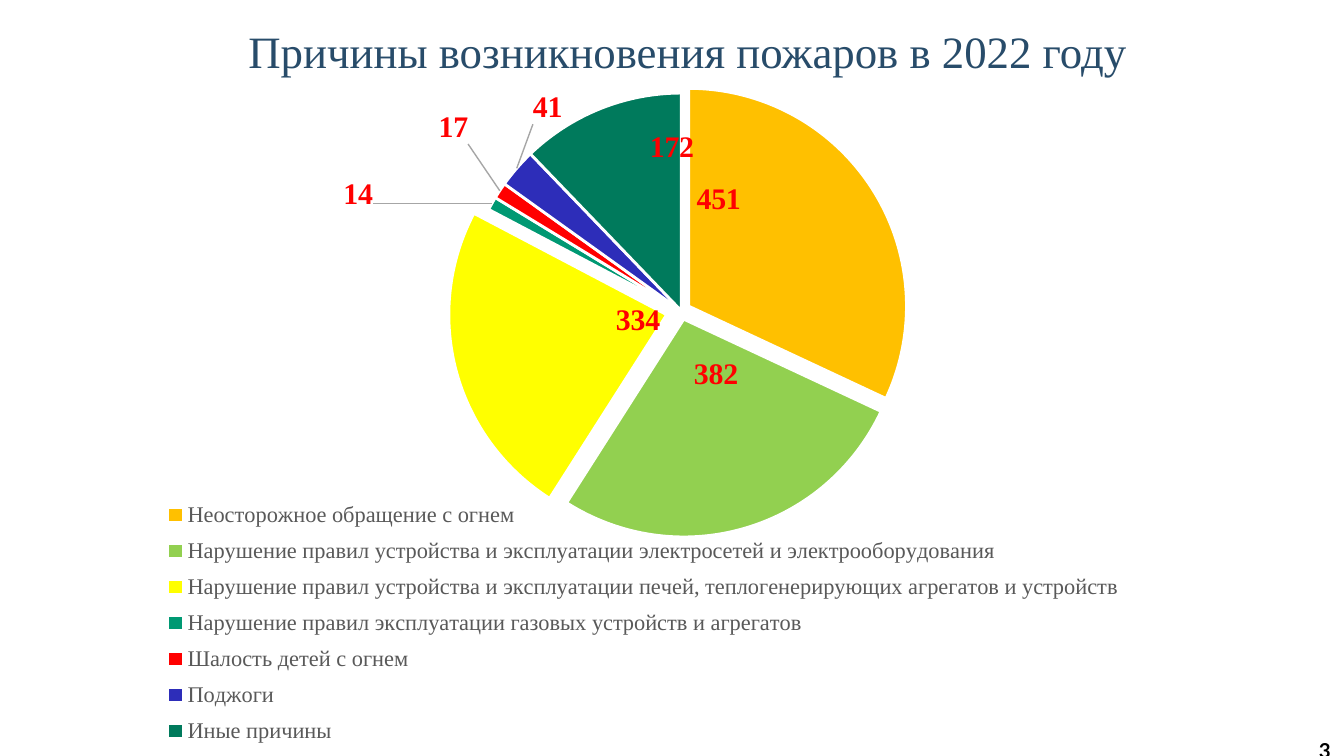
"""Build a slide with an exploded pie chart of the causes of fires in 2022."""
import math

from lxml import etree
from pptx import Presentation
from pptx import util as u
from pptx.chart.data import CategoryChartData
from pptx.dml.color import RGBColor
from pptx.enum import chart as kinds
from pptx.enum import text
from pptx.oxml import ns

WHITE = RGBColor(0xFF, 0xFF, 0xFF)
BLACK = RGBColor(0x00, 0x00, 0x00)
NAVY = RGBColor(0x28, 0x4C, 0x6A)
GREY = RGBColor(0x59, 0x59, 0x59)
SILVER = RGBColor(0xA6, 0xA6, 0xA6)
AMBER = RGBColor(0xFF, 0xC0, 0x00)
LIME = RGBColor(0x92, 0xD0, 0x50)
YELLOW = RGBColor(0xFF, 0xFF, 0x00)
TEAL = RGBColor(0x00, 0x99, 0x73)
RED = RGBColor(0xFF, 0x00, 0x00)
BLUE = RGBColor(0x2D, 0x2D, 0xB9)
GREEN = RGBColor(0x00, 0x7A, 0x5C)

TITLE = "Причины возникновения пожаров в 2022 году"
PAGE_NUMBER = "3"
# name, value, colour, explosion in percent, label centre in points
CAUSES = [
    ("Неосторожное обращение с огнем", 451, AMBER, 4, (385, 107)),
    ("Нарушение правил устройства и эксплуатации электросетей и электрооборудования",
     382, LIME, 4, (383.5, 200.5)),
    ("Нарушение правил устройства и эксплуатации печей, теплогенерирующих агрегатов и устройств",
     334, YELLOW, 7, (341.5, 171.5)),
    ("Нарушение правил эксплуатации газовых устройств и агрегатов", 14, TEAL, 0, (191.5, 104.5)),
    ("Шалость детей с огнем", 17, RED, 0, (242.5, 68.5)),
    ("Поджоги", 41, BLUE, 0, (293, 58)),
    ("Иные причины", 172, GREEN, 0, (359.5, 79)),
]

SERIF = "Times New Roman"
TITLE_FONT = {"name": SERIF, "size": u.Pt(24), "bold": False}
LEGEND_FONT = {"name": SERIF, "size": u.Pt(12)}
LABEL_FONT = {"name": SERIF, "size": u.Pt(16), "bold": True}
CHART_FONT = {"name": "Lato", "size": u.Pt(10)}
NUMBER_FONT = {"name": "Lato", "size": u.Pt(11), "bold": True}

TITLE_BOX = (116, 0, 504.5, 54)
CHART_BOX = (20, 32.4, 674.6, 372.2)
NUMBER_BOX = (570.2, 391.7, 149.8, 13.7)
PLOT = {"layoutTarget": "inner", "xMode": "edge", "yMode": "edge",
        "x": 0.023, "y": 0.047, "w": 0.977, "h": 0.627}
LEGEND = {"xMode": "edge", "yMode": "edge", "x": 0.097, "y": 0.62, "w": 0.77, "h": 0.38}
LABEL_GAP = 4.3
DIGIT_WIDTH = 8
LABEL_HEIGHT = 17.4


def style(font, values, color):
    for name, value in values.items():
        setattr(font, name, value)
    font.color.rgb = color


def place(box, frame):
    for name, value in zip(("left", "top", "width", "height"), frame):
        setattr(box, name, u.Pt(value))


def write(box, words, align, anchor, font, color):
    frame = box.text_frame
    frame.word_wrap = True
    frame.vertical_anchor = anchor
    para = frame.paragraphs[0]
    para.alignment = align
    span = para.add_run()
    span.text = words
    style(span.font, font, color)


def make_layout(values):
    layout = etree.Element(ns.qn("c:layout"))
    manual = etree.SubElement(layout, ns.qn("c:manualLayout"))
    for name, value in values.items():
        etree.SubElement(manual, ns.qn(f"c:{name}"), val=str(value))
    return layout


def set_layout(parent, values, before):
    for old in parent.findall(ns.qn("c:layout")):
        parent.remove(old)
    parent.find(ns.qn(before)).addprevious(make_layout(values))


def label_offsets():
    left, top, width, height = CHART_BOX
    radius = PLOT["h"] * height / 2
    middle_x = left + (PLOT["x"] + PLOT["w"] / 2) * width
    middle_y = top + PLOT["y"] * height + radius
    total = sum(cause[1] for cause in CAUSES)
    passed = 0
    for _, value, _, explosion, (x, y) in CAUSES:
        angle = 2 * math.pi * (passed + value / 2) / total
        across, down = math.sin(angle), -math.cos(angle)
        reach = radius * (1 + explosion / 100) + LABEL_GAP
        half_width = DIGIT_WIDTH * len(str(value)) / 2
        start_x = middle_x + reach * across + math.copysign(half_width, across)
        start_y = middle_y + reach * down + math.copysign(LABEL_HEIGHT / 2, down)
        passed += value
        yield {"x": round((x - start_x) / width, 3),
               "y": round((y - start_y) / height, 3)}


def add_pie(page):
    data = CategoryChartData()
    data.categories = [cause[0] for cause in CAUSES]
    data.add_series("Series 1", [cause[1] for cause in CAUSES])
    chart = page.shapes.add_chart(
        kinds.XL_CHART_TYPE.PIE, *map(u.Pt, CHART_BOX), data).chart
    chart.has_title = False
    style(chart.font, CHART_FONT, BLACK)
    chart.has_legend = True
    chart.legend.position = kinds.XL_LEGEND_POSITION.BOTTOM
    chart.legend.include_in_layout = False
    style(chart.legend.font, LEGEND_FONT, GREY)

    plot = chart.plots[0]
    plot.vary_by_categories = True
    series = plot.series[0]
    labels = series.data_labels
    labels.show_value = True
    labels.position = kinds.XL_LABEL_POSITION.BEST_FIT
    style(labels.font, LABEL_FONT, RED)
    for index, cause in enumerate(CAUSES):
        point = series.points[index]
        point.format.fill.solid()
        point.format.fill.fore_color.rgb = cause[2]
        point.format.line.color.rgb = WHITE
        point.format.line.width = u.Pt(1.5)
        label = point.data_label
        style(label.font, LABEL_FONT, RED)
        label.position = kinds.XL_LABEL_POSITION.BEST_FIT

    root = series._element
    for item, cause in zip(root.findall(ns.qn("c:dPt")), CAUSES):
        explosion = etree.Element(ns.qn("c:explosion"), val=str(cause[3]))
        item.find(ns.qn("c:spPr")).addprevious(explosion)
    label_root = root.find(ns.qn("c:dLbls"))
    for item, offset in zip(label_root.findall(ns.qn("c:dLbl")), label_offsets()):
        item.find(ns.qn("c:idx")).addnext(make_layout(offset))
    for old in label_root.findall(ns.qn("c:showLeaderLines")):
        label_root.remove(old)
    etree.SubElement(label_root, ns.qn("c:showLeaderLines"), val="1")
    leaders = etree.SubElement(label_root, ns.qn("c:leaderLines"))
    shape = etree.SubElement(leaders, ns.qn("c:spPr"))
    line = etree.SubElement(shape, ns.qn("a:ln"), w=str(u.Pt(0.75)))
    fill = etree.SubElement(line, ns.qn("a:solidFill"))
    etree.SubElement(fill, ns.qn("a:srgbClr"), val=str(SILVER))

    set_layout(plot._element.getparent(), PLOT, "c:pieChart")
    set_layout(chart.legend._element, LEGEND, "c:overlay")


def main():
    deck = Presentation()
    deck.slide_width, deck.slide_height = u.Pt(720), u.Pt(405)
    page = deck.slides.add_slide(deck.slide_layouts[5])
    title = page.shapes.title
    place(title, TITLE_BOX)
    write(title, TITLE, text.PP_ALIGN.CENTER, text.MSO_ANCHOR.MIDDLE, TITLE_FONT, NAVY)
    add_pie(page)
    number = page.shapes.add_textbox(*map(u.Pt, NUMBER_BOX))
    write(number, PAGE_NUMBER, text.PP_ALIGN.RIGHT, text.MSO_ANCHOR.TOP, NUMBER_FONT, BLACK)
    deck.save("out.pptx")


if __name__ == "__main__":
    main()
